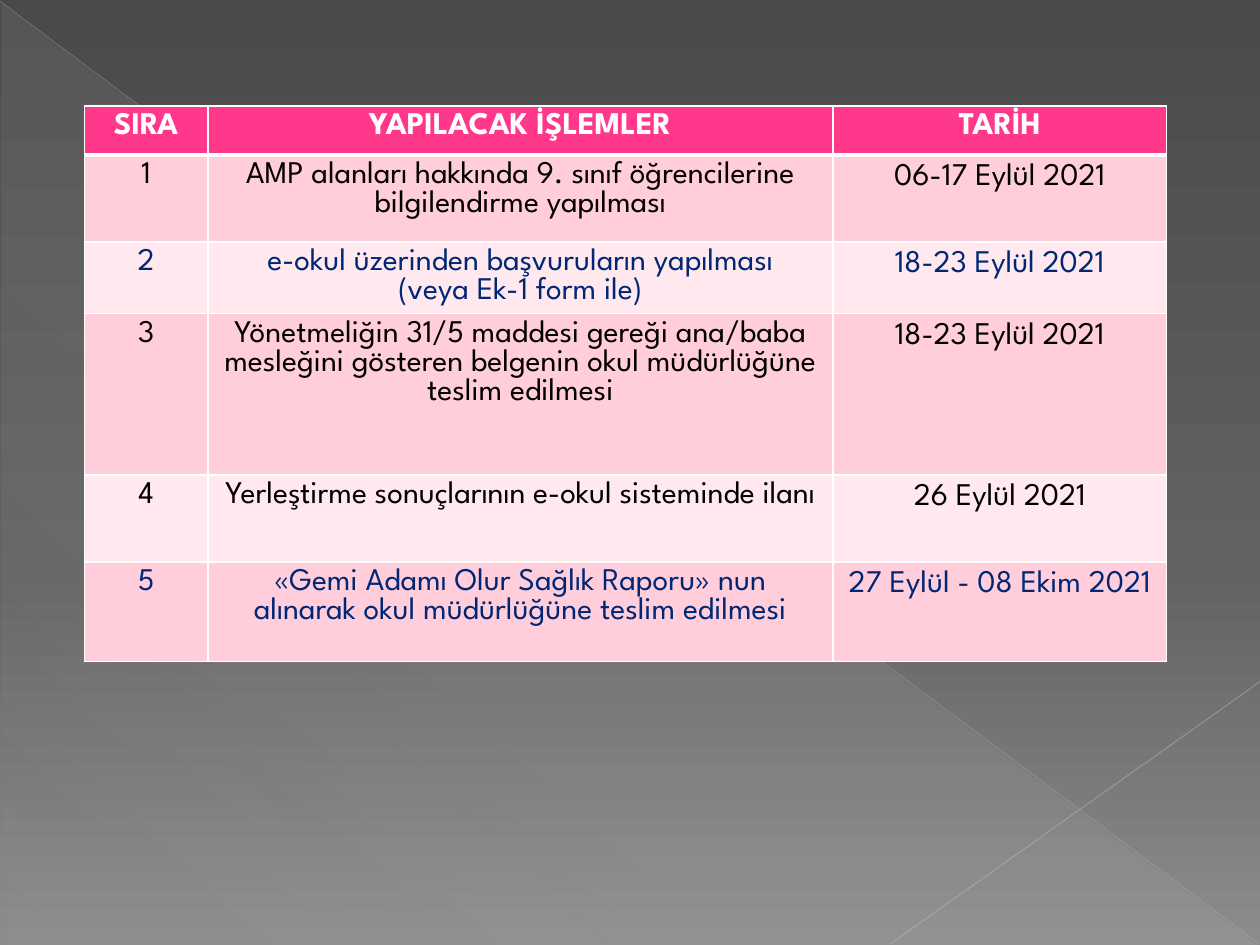
"""Builds a slide with a dated schedule table on a grey gradient background."""
from lxml import etree
from pptx import Presentation
from pptx.dml.color import RGBColor
from pptx.enum.shapes import MSO_CONNECTOR, MSO_SHAPE
from pptx.enum.text import PP_ALIGN
from pptx.oxml.ns import qn
from pptx.util import Inches, Pt

CENTER = PP_ALIGN.CENTER
STRAIGHT = MSO_CONNECTOR.STRAIGHT
RIGHT_TRIANGLE = MSO_SHAPE.RIGHT_TRIANGLE
FONT = "League Spartan"
COLORS = {
    "top": "4A4A4A", "middle": "626262", "bottom": "8C8C8C",
    "triangle": "D2D2D2", "diagonal": "BFBFBF", "corner": "C6C6C6",
    "header": "FF388C", "odd": "FFCEDA", "even": "FFE8EE",
    "white": "FFFFFF", "black": "000000", "navy": "002776",
}


def add_color(parent, color, alpha=100):
    element = etree.SubElement(parent, qn("a:srgbClr"), val=COLORS[color])
    if alpha < 100:
        etree.SubElement(element, qn("a:alpha"), val=str(alpha * 1000))


def set_gradient(owner, stops, angle):
    gradient = owner.find(".//" + qn("a:gradFill"))
    stop_list = gradient.find(qn("a:gsLst"))
    for stop in list(stop_list):
        stop_list.remove(stop)
    for position, color, alpha in stops:
        stop = etree.SubElement(stop_list, qn("a:gs"), pos=str(position * 1000))
        add_color(stop, color, alpha)
    gradient.find(qn("a:lin")).set("ang", str(angle * 60000))


presentation = Presentation()
presentation.slide_width = Inches(10)
presentation.slide_height = Inches(7.5)
slide = presentation.slides.add_slide(presentation.slide_layouts[6])

slide.background.fill.gradient()
set_gradient(slide.element, [(0, "top", 100), (60, "middle", 100), (100, "bottom", 100)], 90)

triangle = slide.shapes.add_shape(
    RIGHT_TRIANGLE, Inches(0.01), Inches(0.02), Inches(9.98), Inches(7.48))
triangle.shadow.inherit = False
triangle.line.fill.background()
triangle.fill.gradient()
set_gradient(triangle._element,
             [(0, "triangle", 10), (70, "triangle", 8), (100, "triangle", 1)], 133)

background_lines = [
    (0, 0.01, 9.99, 7.49, "diagonal", 0.39, 35),
    (10, 5.41, 7.07, 7.49, "corner", 0.47, 45),
]
for left, top, right, bottom, color, width, alpha in background_lines:
    connector = slide.shapes.add_connector(
        STRAIGHT, Inches(left), Inches(top), Inches(right), Inches(bottom))
    connector.line.width = Pt(width)
    connector.line.color.rgb = RGBColor.from_string(COLORS[color])
    solid = connector._element.find(".//" + qn("a:solidFill"))
    solid.remove(solid[0])
    add_color(solid, color, alpha)
    etree.SubElement(connector._element.spPr, qn("a:effectLst"))

column_widths = [0.98, 4.96, 2.65]
row_heights = [0.39, 0.69, 0.57, 1.28, 0.69, 0.79]
schedule = [
    ("white", "SIRA", "YAPILACAK İŞLEMLER", "TARİH"),
    ("black", "1", "AMP alanları hakkında 9. sınıf öğrencilerine bilgilendirme yapılması",
     "06-17 Eylül 2021"),
    ("navy", "2", "e-okul üzerinden başvuruların yapılması\n(veya Ek-1 form ile)",
     "18-23 Eylül 2021"),
    ("black", "3", "Yönetmeliğin 31/5 maddesi gereği ana/baba mesleğini gösteren belgenin "
     "okul müdürlüğüne teslim edilmesi", "18-23 Eylül 2021"),
    ("black", "4", "Yerleştirme sonuçlarının e-okul sisteminde ilanı", "26 Eylül 2021"),
    ("navy", "5", "«Gemi Adamı Olur Sağlık Raporu» nun alınarak okul müdürlüğüne "
     "teslim edilmesi", "27 Eylül - 08 Ekim 2021"),
]
table = slide.shapes.add_table(
    len(row_heights), len(column_widths), Inches(0.67), Inches(0.84),
    Inches(sum(column_widths)), Inches(sum(row_heights))).table
for column, width in zip(table.columns, column_widths):
    column.width = Inches(width)
for row, height in zip(table.rows, row_heights):
    row.height = Inches(height)

for row_index, (text_color, *texts) in enumerate(schedule):
    is_header = row_index == 0
    fill_color = "header" if is_header else ("even", "odd")[row_index % 2]
    border_widths = {"lnL": 1, "lnR": 1, "lnT": 3 if row_index == 1 else 1,
                     "lnB": 3 if is_header else 1}
    for column_index, text in enumerate(texts):
        cell = table.cell(row_index, column_index)
        properties = cell._tc.get_or_add_tcPr()
        for side, width in border_widths.items():
            border = etree.SubElement(properties, qn("a:" + side), w=str(Pt(width)))
            add_color(etree.SubElement(border, qn("a:solidFill")), "white")
        cell.fill.solid()
        cell.fill.fore_color.rgb = RGBColor.from_string(COLORS[fill_color])
        for line_index, line in enumerate(text.split("\n")):
            frame = cell.text_frame
            paragraph = frame.add_paragraph() if line_index else frame.paragraphs[0]
            paragraph.alignment = CENTER
            if column_index == 2 and not is_header:
                paragraph.line_spacing = 1.07
                paragraph.space_after = Pt(8)
            run = paragraph.add_run()
            run.text = line
            run.font.name = FONT
            run.font.size = Pt(18)
            run.font.bold = is_header
            run.font.color.rgb = RGBColor.from_string(COLORS[text_color])

presentation.save("out.pptx")
